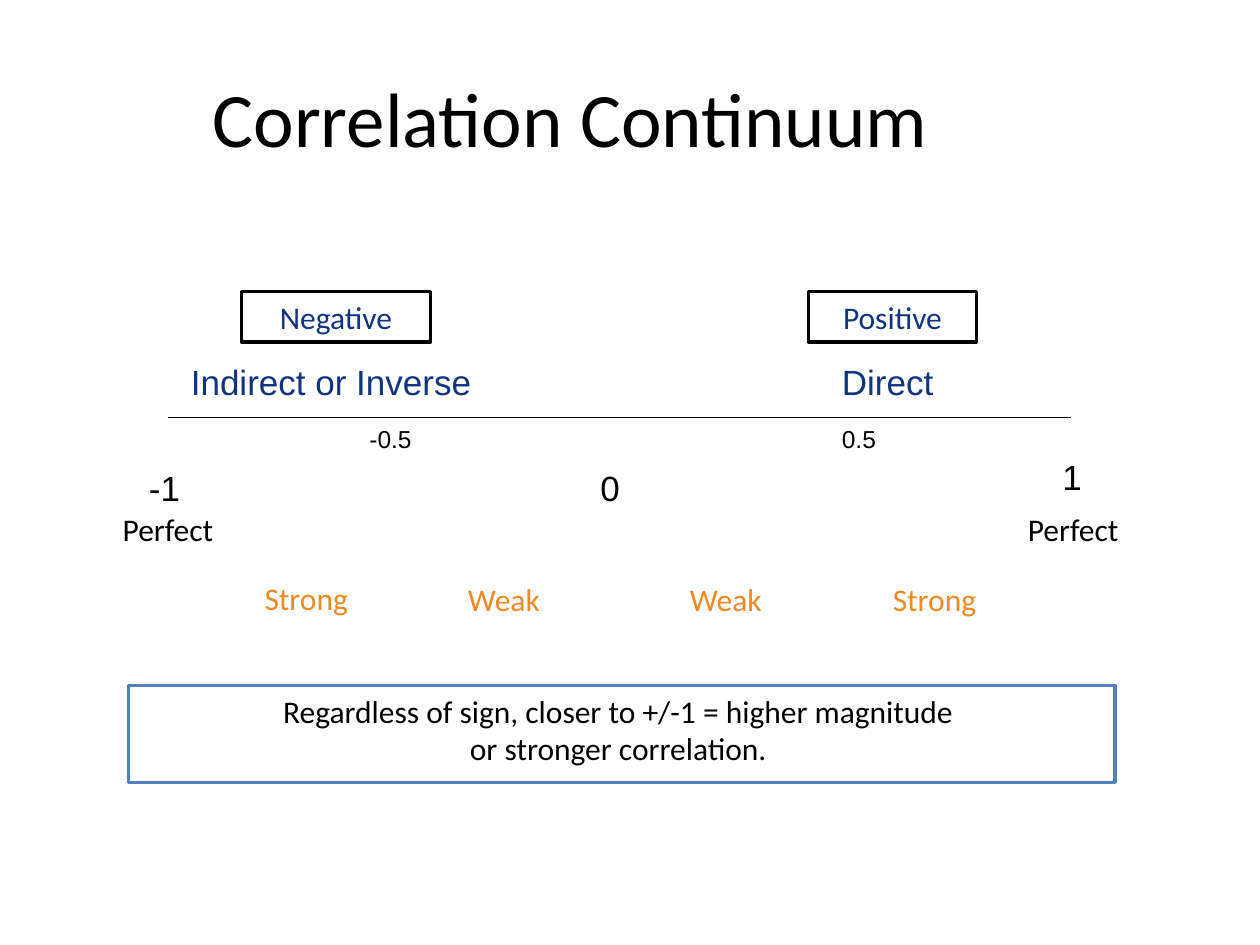
import pptx
import pptx.dml.color
import pptx.enum.shapes
import pptx.enum.text
import pptx.oxml.ns
import pptx.util
from lxml import etree

Pt = pptx.util.Pt
ALIGN = pptx.enum.text.PP_ALIGN
ANCHOR = pptx.enum.text.MSO_ANCHOR
COLORS = {
    "black": "000000",
    "white": "FFFFFF",
    "navy": "113480",
    "orange": "EF8923",
    "blue": "4F81BD",
}


def rgb(name):
    return pptx.dml.color.RGBColor.from_string(COLORS[name])


def write(box, text, size, font, color, align):
    frame = box.text_frame
    frame.word_wrap = True
    frame.vertical_anchor = ANCHOR.TOP
    frame.text = text
    for para in frame.paragraphs:
        para.alignment = align
        for span in para.runs:
            span.font.size = Pt(size)
            span.font.name = font
            span.font.color.rgb = rgb(color)


def add_label(page, place, text, size, color="black", font="Arial", align=ALIGN.LEFT):
    box = page.shapes.add_textbox(*map(Pt, place))
    write(box, text, size, font, color, align)
    return box


def add_panel(page, place, text, color="black", fill="white", outline=None):
    kind = pptx.enum.shapes.MSO_SHAPE.RECTANGLE
    box = page.shapes.add_shape(kind, *map(Pt, place))
    box.shadow.inherit = False
    if fill:
        box.fill.solid()
        box.fill.fore_color.rgb = rgb(fill)
    else:
        box.fill.background()
    if outline:
        box.line.color.rgb = rgb(outline)
        box.line.width = Pt(2)
    else:
        box.line.fill.background()
    write(box, text, 18, "Calibri", color, ALIGN.CENTER)
    return box


def add_axis(page, left, right, top):
    kind = pptx.enum.shapes.MSO_CONNECTOR.STRAIGHT
    axis = page.shapes.add_connector(kind, Pt(left), Pt(top), Pt(right), Pt(top))
    axis.line.color.rgb = rgb("black")
    axis.line.width = Pt(0.75)
    etree.SubElement(axis._element.spPr, pptx.oxml.ns.qn("a:effectLst"))


def main():
    deck = pptx.Presentation()
    deck.slide_width, deck.slide_height = Pt(720), Pt(540)
    page = deck.slides.add_slide(deck.slide_layouts[6])

    title = add_label(page, (54, 10.8, 563.8, 111.6), "Correlation Continuum", 44,
                      font="Calibri", align=ALIGN.CENTER)
    title.text_frame.vertical_anchor = ANCHOR.MIDDLE
    title.text_frame.margin_right = Pt(27)

    summary = add_panel(
        page, (73.4, 391.7, 563.8, 55.4),
        "Regardless of sign, closer to +/-1 = higher magnitude\nor stronger correlation.",
        fill=None, outline="blue")
    summary.text_frame.margin_right = Pt(11)

    add_axis(page, 96, 612, 238.5)
    for left, top, text in [(78, 263, "-1"), (600, 256.5, "1"), (336, 263, "0")]:
        add_label(page, (left, top, 66, 31.5), text, 20)
    for left, width, text in [(102, 180, "Indirect or Inverse"), (474, 78, "Direct")]:
        add_label(page, (left, 202.5, width, 31.5), text, 20, "navy")
    for left, width, text in [(138, 108, "Negative"), (462, 96, "Positive")]:
        add_panel(page, (left, 166.5, width, 29), text, "navy", outline="black")
    for left, text in [(204, "-0.5"), (474, "0.5")]:
        add_label(page, (left, 238.5, 42, 24), text, 14)

    for left in (48, 565.2):
        add_panel(page, (left, 288, 96, 31.5), "Perfect")
    for left, top, width, text in [
        (136, 327.5, 78, "Strong"),
        (252, 328, 72, "Weak"),
        (378.8, 328, 72, "Weak"),
        (495, 328, 78, "Strong"),
    ]:
        add_panel(page, (left, top, width, 29), text, "orange")

    deck.save("out.pptx")


if __name__ == "__main__":
    main()
